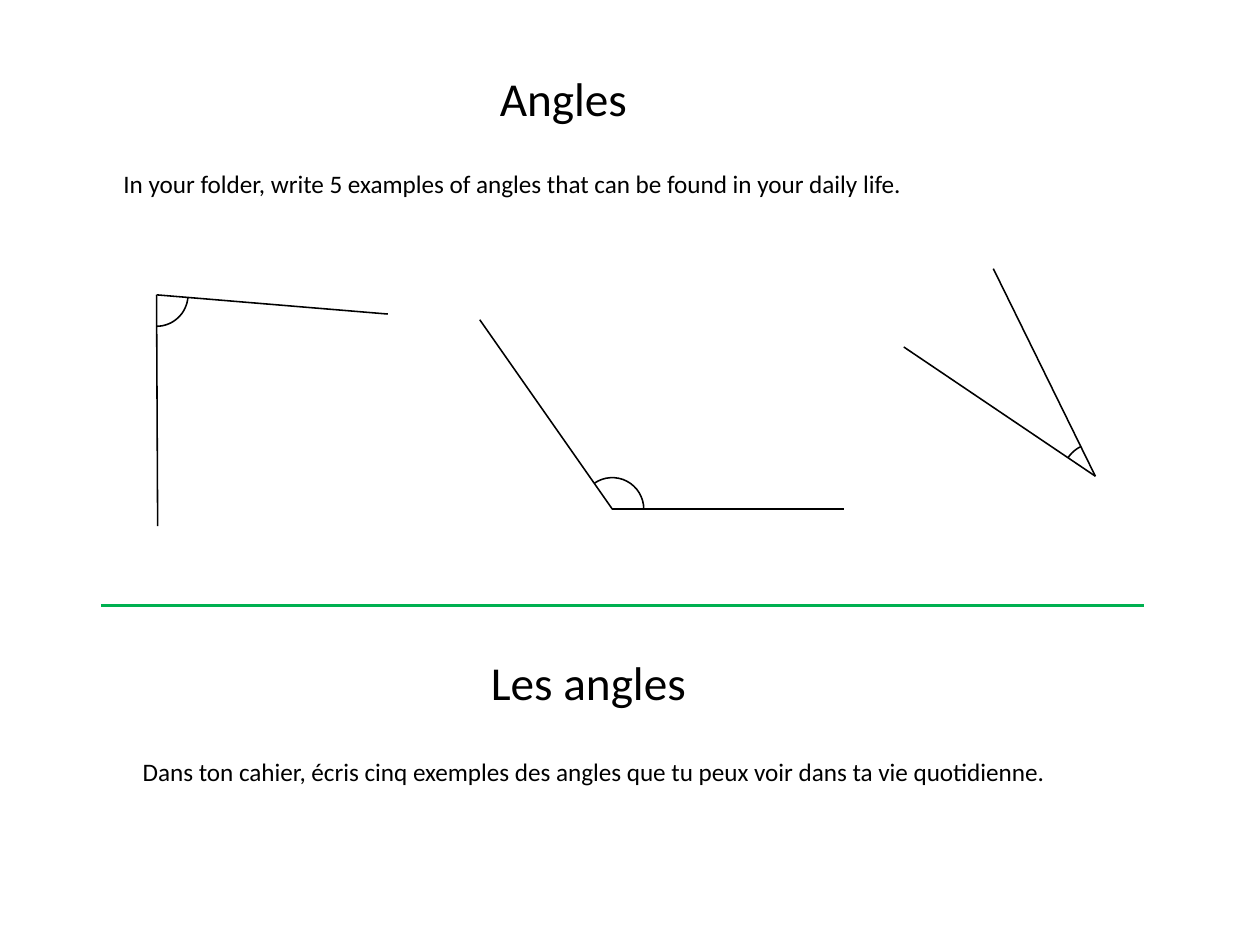
import math
from lxml import etree
from pptx import Presentation
from pptx.dml.color import RGBColor
from pptx.enum import shapes, text
from pptx.oxml.ns import qn
from pptx.util import Pt

BLACK = RGBColor(0x00, 0x00, 0x00)
GREEN = RGBColor(0x00, 0xB0, 0x50)
STEPS = 16

# left, top, width, height, size, words
LABELS = [
    (310.3, 40.7, 304.6, 43.9, 30, "Angles"),
    (71.3, 103.4, 758.2, 26.6, 16,
     "In your folder, write 5 examples of angles that can be found in your daily life."),
    (304.6, 411.1, 259.2, 43.9, 30, "Les angles"),
    (83.5, 476.6, 758.2, 26.6, 16,
     "Dans ton cahier, écris cinq exemples des angles que tu peux voir dans ta vie quotidienne."),
]

# vertex, end of each arm, radius of the arc
ANGLES = [
    ((695.5, 302.4), (630.7, 170.6), (573.8, 220.3), 21),
    ((388.8, 323.3), (535.7, 323.3), (304.6, 203), 20),
    ((99.4, 187.2), (100.1, 334.1), (246.2, 199.4), 20),
]


def add_label(slide, left, top, width, height, size, words):
    box = slide.shapes.add_textbox(Pt(left), Pt(top), Pt(width), Pt(height))
    frame = box.text_frame
    frame.word_wrap = True
    frame.auto_size = text.MSO_AUTO_SIZE.SHAPE_TO_FIT_TEXT
    run = frame.paragraphs[0].add_run()
    run.text = words
    run.font.color.rgb = BLACK
    for name, value in {"name": "Calibri", "size": Pt(size)}.items():
        setattr(run.font, name, value)


def add_line(parent, start, end, color=BLACK, width=1):
    line = parent.shapes.add_connector(
        shapes.MSO_CONNECTOR.STRAIGHT, *map(Pt, start + end))
    line.line.color.rgb = color
    line.line.width = Pt(width)
    etree.SubElement(line._element.spPr, qn("a:effectLst"))


def add_arc(parent, vertex, first, last, radius):
    x, y = vertex
    begin, stop = (math.atan2(b - y, a - x) for a, b in (first, last))
    turns = [begin + (stop - begin) * i / STEPS for i in range(STEPS + 1)]
    points = [(Pt(x + radius * math.cos(t)), Pt(y + radius * math.sin(t)))
              for t in turns]
    path = parent.shapes.build_freeform(*points[0])
    path.add_line_segments(points[1:], close=False)
    arc = path.convert_to_shape()
    arc.shadow.inherit = False
    arc.fill.background()
    arc.line.color.rgb = BLACK
    arc.line.width = Pt(1)


def add_angle(slide, vertex, first, last, radius):
    group = slide.shapes.add_group_shape()
    for end in (first, last):
        add_line(group, vertex, end)
    add_arc(group, vertex, first, last, radius)


def main():
    deck = Presentation()
    deck.slide_width, deck.slide_height = Pt(800), Pt(600)
    slide = deck.slides.add_slide(deck.slide_layouts[6])

    # Angle drawings
    for angle in ANGLES:
        add_angle(slide, *angle)

    # Divider between the two languages
    add_line(slide, (64.1, 384.5), (726.5, 384.5), GREEN, 2.25)

    # Titles and tasks
    for label in LABELS:
        add_label(slide, *label)

    deck.save("out.pptx")


if __name__ == "__main__":
    main()
